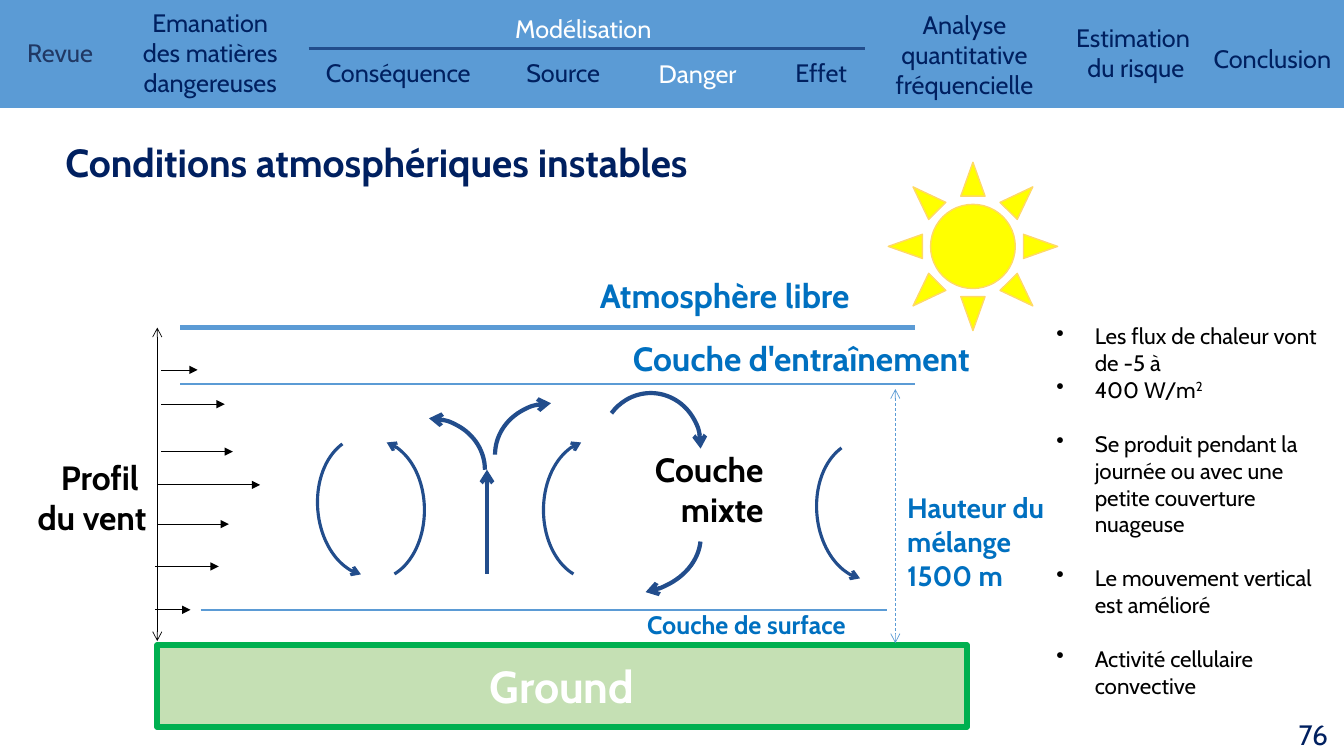
"""Build the slide on unstable atmospheric conditions."""
from dataclasses import dataclass
from typing import Optional

import lxml.etree
import pptx
import pptx.dml.color
import pptx.enum.dml
import pptx.enum.shapes
import pptx.enum.text
import pptx.oxml.ns
import pptx.shapes.autoshape
import pptx.shapes.base
import pptx.shapes.connector
import pptx.slide
import pptx.text.text
import pptx.util

Inches = pptx.util.Inches
Pt = pptx.util.Pt
Shape = pptx.enum.shapes.MSO_SHAPE
Align = pptx.enum.text.PP_ALIGN
Middle = pptx.enum.text.MSO_ANCHOR.MIDDLE


@dataclass(frozen=True)
class Theme:
    font: str = "Cabin"
    sky: str = "5B9BD5"
    current: str = "224D8C"
    navy: str = "002060"
    past: str = "203864"
    layer: str = "0070C0"
    white: str = "FFFFFF"
    black: str = "000000"
    grass: str = "C5E0B4"
    grass_edge: str = "00B050"
    sun: str = "FFFF00"
    sun_edge: str = "FFD966"
    body: float = 16
    small: float = 18
    medium: float = 20
    large: float = 24
    title: float = 28
    ground: float = 32
    blank_line: float = 19.2


THEME = Theme()


@dataclass(frozen=True)
class Label:
    text: str
    box: tuple[float, float, float, float]
    color: str = THEME.navy
    size: float = THEME.small
    bold: bool = False
    align: Align = Align.LEFT
    middle: bool = False


@dataclass(frozen=True)
class Stroke:
    start: tuple[float, float]
    end: tuple[float, float]
    color: str
    width: float
    head: Optional[str] = None
    tail: Optional[str] = None
    dashed: bool = False


@dataclass(frozen=True)
class Eddy:
    box: tuple[float, float, float, float]
    angles: tuple[float, float] = (270, 0)
    width: float = 3
    rotation: float = 0
    mirrored: bool = False


@dataclass(frozen=True)
class Finding:
    text: str
    superscript: str = ""
    gap_before: bool = True


def tab(text: str, left: float, top: float, width: float, height: float, color: str = THEME.navy) -> Label:
    """Describe one centred entry of the navigation band."""
    return Label(text, (left, top, width, height), color, align=Align.CENTER)


def layer_name(text: str, left: float, top: float, width: float, height: float, size: float) -> Label:
    """Describe the bold name of an atmospheric layer."""
    return Label(text, (left, top, width, height), THEME.layer, size, True)


def wind(left: float, right: float, height: float) -> Stroke:
    """Describe one arrow of the wind profile."""
    return Stroke((left, height), (right, height), THEME.black, 0.5, tail="triangle")


BULGE = (279.8, 73.1)

NAVIGATION = [
    Label("Revue", (0.17, 0.32, 1.11, 0.4), THEME.past),
    tab("Effet", 7.27, 0.52, 1.75, 0.39),
    tab("Conséquence", 3.06, 0.52, 1.78, 0.4),
    tab("Danger", 6.1, 0.53, 1.64, 0.38, THEME.white),
    tab("Source", 4.59, 0.52, 1.99, 0.4),
    tab("Modélisation", 3.06, 0.08, 5.45, 0.4, THEME.white),
    tab("Conclusion", 11.84, 0.38, 1.56, 0.43),
    tab("Analyse quantitative fréquencielle", 8.69, 0.04, 1.75, 0.96),
    tab("Estimation \ndu risque", 10.39, 0.17, 1.75, 0.69),
    tab("Emanation des matières dangereuses", 1.27, 0.02, 1.63, 1),
]
HEADINGS = [
    Label("76", (10.16, 7.08, 3.11, 0.4), size=THEME.medium, align=Align.RIGHT, middle=True),
    Label("Conditions atmosphériques instables", (0.55, 1.32, 12.75, 6.15), size=THEME.title, bold=True),
]
DIAGRAM_LABELS = [
    layer_name("Atmosphère libre", 5.85, 2.68, 3.09, 0.5, THEME.large),
    layer_name("Couche d'entraînement", 6.18, 3.3, 4.14, 0.5, THEME.large),
    layer_name("Hauteur du\nmélange\n1500 m", 8.9, 4.82, 1.87, 1.11, THEME.medium),
    layer_name("Couche de surface", 6.32, 6, 2.52, 0.4, THEME.small),
    Label("Profil \ndu vent", (0.07, 4.48, 1.48, 0.91), THEME.black, THEME.large, True, Align.RIGHT),
    Label("Couche mixte", (6, 4.4, 1.67, 0.91), THEME.black, THEME.large, True, Align.RIGHT),
]
MODELLING_RULE = Stroke((3.06, 0.48), (8.58, 0.48), THEME.current, 2.25)
DIAGRAM_STROKES = [
    Stroke((1.79, 3.25), (9.08, 3.25), THEME.sky, 3),
    Stroke((1.79, 3.81), (9.08, 3.81), THEME.sky, 1.5),
    Stroke((1.99, 6.05), (8.8, 6.05), THEME.sky, 1.5),
    Stroke((8.88, 3.86), (8.88, 6.38), THEME.sky, 0.5, "arrow", "arrow", True),
    Stroke((1.56, 3.25), (1.56, 6.36), THEME.black, 0.5, "arrow", "arrow"),
    wind(1.6, 1.96, 3.67),
    wind(1.6, 2.23, 4.01),
    wind(1.6, 2.31, 4.48),
    wind(1.56, 2.58, 4.81),
    wind(1.56, 2.27, 5.2),
    wind(1.54, 2.17, 5.62),
    wind(1.54, 1.89, 6.05),
    Stroke((4.83, 5.69), (4.83, 4.66), THEME.current, 3, tail="arrow"),
]
EDDIES = [
    Eddy((3.23, 4.37, 0.98, 1.38), BULGE, 2.25),
    Eddy((3.15, 4.33, 0.98, 1.38), BULGE, 2.25, rotation=175.3),
    Eddy((8.1, 4.37, 0.98, 1.38), BULGE, 2.25, rotation=175.3),
    Eddy((5.39, 4.37, 0.98, 1.38), BULGE, 2.25, mirrored=True),
    Eddy((3.7, 4.15, 1.11, 1.02)),
    Eddy((4.91, 4, 1.11, 1.02), mirrored=True),
    Eddy((5.96, 3.9, 0.99, 1.04), (176.4, 320.7), mirrored=True),
    Eddy((5.53, 4.76, 1.42, 1.13), (106.5, 176.1), mirrored=True),
]
FINDINGS = [
    Finding("Les flux de chaleur vont de -5 à", gap_before=False),
    Finding("400 W/m", "2", gap_before=False),
    Finding("Se produit pendant la journée ou avec une petite couverture nuageuse"),
    Finding("Le mouvement vertical est amélioré"),
    Finding("Activité cellulaire convective"),
]


def rgb(color: str) -> pptx.dml.color.RGBColor:
    """Turn a hex string into a colour."""
    return pptx.dml.color.RGBColor.from_string(color)


def style_text(paragraph: pptx.text.text._Paragraph, color: str, size: float, bold: bool = False) -> None:
    """Set the font of a paragraph."""
    font = paragraph.font
    font.name, font.size, font.bold = THEME.font, Pt(size), bold
    font.color.rgb = rgb(color)


def fill_label(shape: pptx.shapes.autoshape.Shape, label: Label) -> None:
    """Write a label into a shape."""
    frame = shape.text_frame
    frame.word_wrap = True
    frame.text = label.text
    if label.middle:
        frame.vertical_anchor = Middle
    for paragraph in frame.paragraphs:
        paragraph.alignment = label.align
        style_text(paragraph, label.color, label.size, label.bold)


def draw_label(slide: pptx.slide.Slide, label: Label) -> None:
    """Draw a label in its own text box."""
    fill_label(slide.shapes.add_textbox(*map(Inches, label.box)), label)


def draw_shape(slide: pptx.slide.Slide, kind: Shape, box: tuple[float, float, float, float],
               fill: Optional[str], edge: Optional[str] = None, width: float = 1) -> pptx.shapes.autoshape.Shape:
    """Draw a preset shape with flat fill and edge."""
    shape = slide.shapes.add_shape(kind, *map(Inches, box))
    shape.shadow.inherit = False
    if fill:
        shape.fill.solid()
        shape.fill.fore_color.rgb = rgb(fill)
    else:
        shape.fill.background()
    if edge:
        shape.line.color.rgb, shape.line.width = rgb(edge), Pt(width)
    else:
        shape.line.fill.background()
    return shape


def add_arrowheads(shape: pptx.shapes.base.BaseShape, head: Optional[str], tail: Optional[str]) -> None:
    """Add arrowheads to the ends of an outline."""
    outline = shape._element.spPr.find(pptx.oxml.ns.qn("a:ln"))
    for end, kind in (("a:headEnd", head), ("a:tailEnd", tail)):
        if kind:
            lxml.etree.SubElement(outline, pptx.oxml.ns.qn(end), type=kind)


def draw_stroke(slide: pptx.slide.Slide, stroke: Stroke) -> None:
    """Draw a straight line or arrow."""
    line = slide.shapes.add_connector(
        pptx.enum.shapes.MSO_CONNECTOR.STRAIGHT, *map(Inches, stroke.start + stroke.end))
    line.line.color.rgb, line.line.width = rgb(stroke.color), Pt(stroke.width)
    if stroke.dashed:
        line.line.dash_style = pptx.enum.dml.MSO_LINE.DASH
    add_arrowheads(line, stroke.head, stroke.tail)
    lxml.etree.SubElement(line._element.spPr, pptx.oxml.ns.qn("a:effectLst"))


def draw_eddy(slide: pptx.slide.Slide, eddy: Eddy) -> None:
    """Draw a curved air current."""
    arc = draw_shape(slide, Shape.ARC, eddy.box, None, THEME.current, eddy.width)
    for index, angle in enumerate(eddy.angles):
        arc.adjustments[index] = angle * 0.6
    arc.rotation = eddy.rotation
    if eddy.mirrored:
        arc._element.spPr.xfrm.set("flipH", "1")
    add_arrowheads(arc, "arrow", None)


def draw_findings(slide: pptx.slide.Slide) -> None:
    """Draw the bulleted list of findings."""
    frame = slide.shapes.add_textbox(*map(Inches, (10.38, 3.15, 2.83, 3.87))).text_frame
    frame.word_wrap = True
    for index, finding in enumerate(FINDINGS):
        paragraph = frame.add_paragraph() if index else frame.paragraphs[0]
        paragraph.add_run().text = finding.text
        if finding.superscript:
            exponent = paragraph.add_run()
            exponent.text = finding.superscript
            exponent.font._element.set("baseline", "30000")
        if finding.gap_before:
            paragraph.space_before = Pt(THEME.blank_line)
        style_text(paragraph, THEME.black, THEME.body)
        properties = paragraph._p.get_or_add_pPr()
        properties.set("marL", str(Inches(0.38)))
        properties.set("indent", str(Inches(-0.38)))
        bullet = lxml.etree.Element(pptx.oxml.ns.qn("a:buChar"), char="•")
        properties.find(pptx.oxml.ns.qn("a:defRPr")).addprevious(bullet)


def main() -> None:
    """Build and save the slide."""
    deck = pptx.Presentation()
    deck.slide_width, deck.slide_height = Inches(13.33), Inches(7.5)
    slide = deck.slides.add_slide(deck.slide_layouts[6])
    draw_shape(slide, Shape.RECTANGLE, (0, 0, 13.33, 1.07), THEME.sky)
    draw_stroke(slide, MODELLING_RULE)
    for label in NAVIGATION + HEADINGS:
        draw_label(slide, label)
    ground_box = (1.56, 6.4, 8.03, 0.81)
    ground = draw_shape(slide, Shape.RECTANGLE, ground_box, THEME.grass, THEME.grass_edge, 4.5)
    fill_label(ground, Label("Ground", ground_box, THEME.white, THEME.ground, True, Align.CENTER, True))
    draw_shape(slide, Shape.SUN, (8.81, 1.61, 1.68, 1.67), THEME.sun, THEME.sun_edge)
    for stroke in DIAGRAM_STROKES:
        draw_stroke(slide, stroke)
    for eddy in EDDIES:
        draw_eddy(slide, eddy)
    for label in DIAGRAM_LABELS:
        draw_label(slide, label)
    draw_findings(slide)
    deck.save("out.pptx")


if __name__ == "__main__":
    main()
